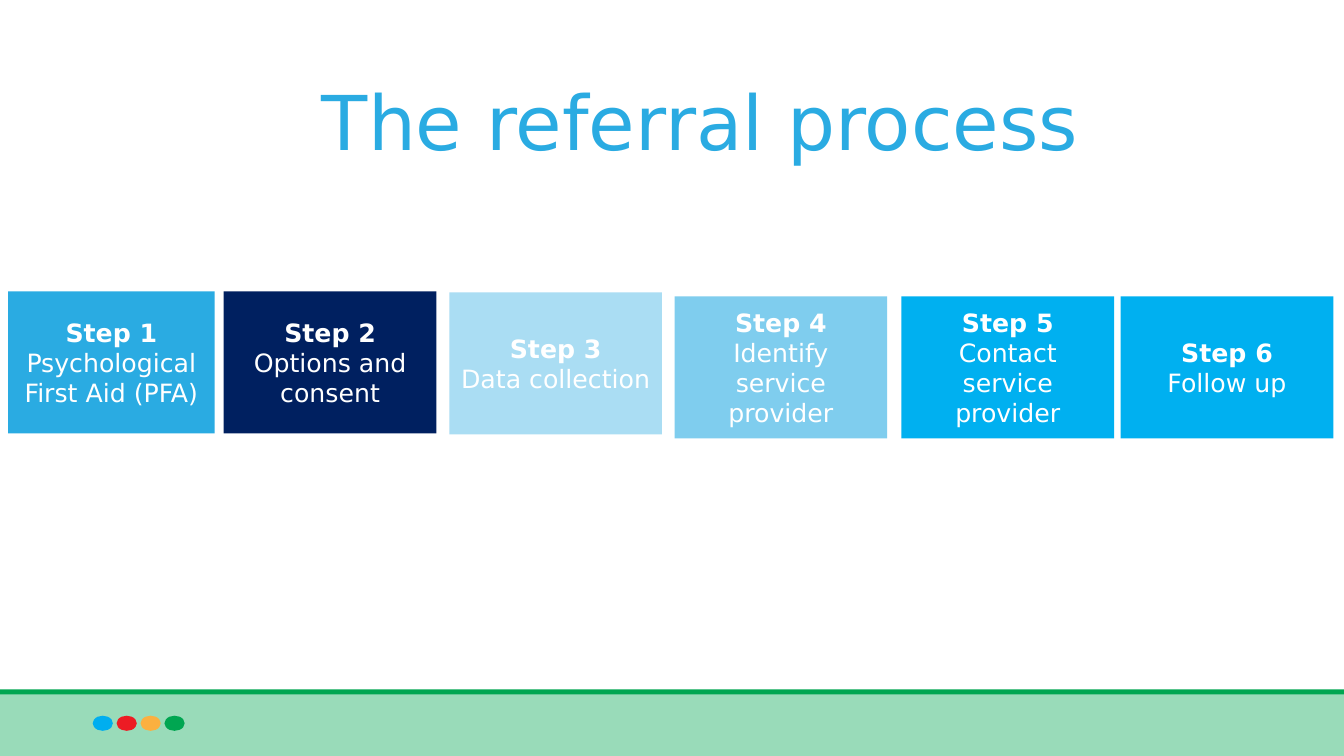
"""Build the referral process slide: six steps above a banded footer."""
from typing import NamedTuple

from pptx import Presentation
from pptx.dml.color import RGBColor
from pptx.enum.shapes import MSO_SHAPE
from pptx.enum.text import MSO_ANCHOR, PP_ALIGN
from pptx.util import Inches, Pt

RECTANGLE = MSO_SHAPE.RECTANGLE
OVAL = MSO_SHAPE.OVAL
MIDDLE = MSO_ANCHOR.MIDDLE
BOTTOM = MSO_ANCHOR.BOTTOM
CENTER = PP_ALIGN.CENTER

SLIDE_WIDTH = Inches(13.33)
SLIDE_HEIGHT = Inches(7.5)
WHITE = "FFFFFF"
SKY = "2AABE2"
STEP_WIDTH = 15.83
STEP_HEIGHT = 18.8
DOT_LEFT = 6.9
DOT_PITCH = 1.78
DOT_COLOURS = ("00AEEF", "ED1C24", "FBB040", "00A651")


class Area(NamedTuple):
    """Place and size in percent of the slide's width and height."""
    left: float
    top: float
    width: float
    height: float


class Step(NamedTuple):
    """One step of the referral process."""
    left: float
    top: float
    fill: str
    action: str
    width: float = STEP_WIDTH


STEPS = (
    Step(0.6, 38.53, SKY, "Psychological First Aid (PFA)", 15.38),
    Step(16.65, 38.53, "002060", "Options and consent"),
    Step(33.43, 38.67, "AADDF3", "Data collection"),
    Step(50.19, 39.2, "7FCDEE", "Identify service provider"),
    Step(67.07, 39.2, "00B0F0", "Contact service provider"),
    Step(83.38, 39.2, "00B0F0", "Follow up"),
)


def colour(value: str) -> RGBColor:
    return RGBColor.from_string(value)


def place(area: Area) -> tuple[int, int, int, int]:
    return (
        round(SLIDE_WIDTH * area.left / 100),
        round(SLIDE_HEIGHT * area.top / 100),
        round(SLIDE_WIDTH * area.width / 100),
        round(SLIDE_HEIGHT * area.height / 100),
    )


def add_block(slide, area: Area, fill: str, outline=RECTANGLE):
    block = slide.shapes.add_shape(outline, *place(area))
    block.shadow.inherit = False
    block.fill.solid()
    block.fill.fore_color.rgb = colour(fill)
    block.line.fill.background()
    return block


def write(frame, lines: list[tuple[str, bool]], size: int, ink: str, anchor) -> None:
    frame.word_wrap = True
    frame.vertical_anchor = anchor
    for index, (wording, bold) in enumerate(lines):
        paragraph = frame.add_paragraph() if index else frame.paragraphs[0]
        paragraph.alignment = CENTER
        run = paragraph.add_run()
        run.text = wording
        run.font.color.rgb = colour(ink)
        text_format = {"name": "DejaVu Sans", "size": Pt(size), "bold": bold}
        for attribute, value in text_format.items():
            setattr(run.font, attribute, value)


def add_footer(slide) -> None:
    add_block(slide, Area(0, 91.6, 100, 8.4), "99DBB9")
    for index, fill in enumerate(DOT_COLOURS):
        dot_area = Area(DOT_LEFT + index * DOT_PITCH, 94.67, 1.5, 2)
        add_block(slide, dot_area, fill, OVAL)
    add_block(slide, Area(0, 91.2, 100, 0.67), "00A651")


def add_title(slide) -> None:
    title = slide.shapes.add_textbox(*place(Area(15, 18.27, 74.19, 4.27)))
    write(title.text_frame, [("The referral process", False)], 54, SKY, BOTTOM)


def add_step(slide, number: int, step: Step) -> None:
    step_area = Area(step.left, step.top, step.width, STEP_HEIGHT)
    block = add_block(slide, step_area, step.fill)
    lines = [(f"Step {number}", True), (step.action, False)]
    write(block.text_frame, lines, 18, WHITE, MIDDLE)


def main() -> None:
    presentation = Presentation()
    presentation.slide_width = SLIDE_WIDTH
    presentation.slide_height = SLIDE_HEIGHT
    slide = presentation.slides.add_slide(presentation.slide_layouts[6])
    add_footer(slide)
    add_title(slide)
    for number, step in enumerate(STEPS, start=1):
        add_step(slide, number, step)
    presentation.save("out.pptx")


if __name__ == "__main__":
    main()
